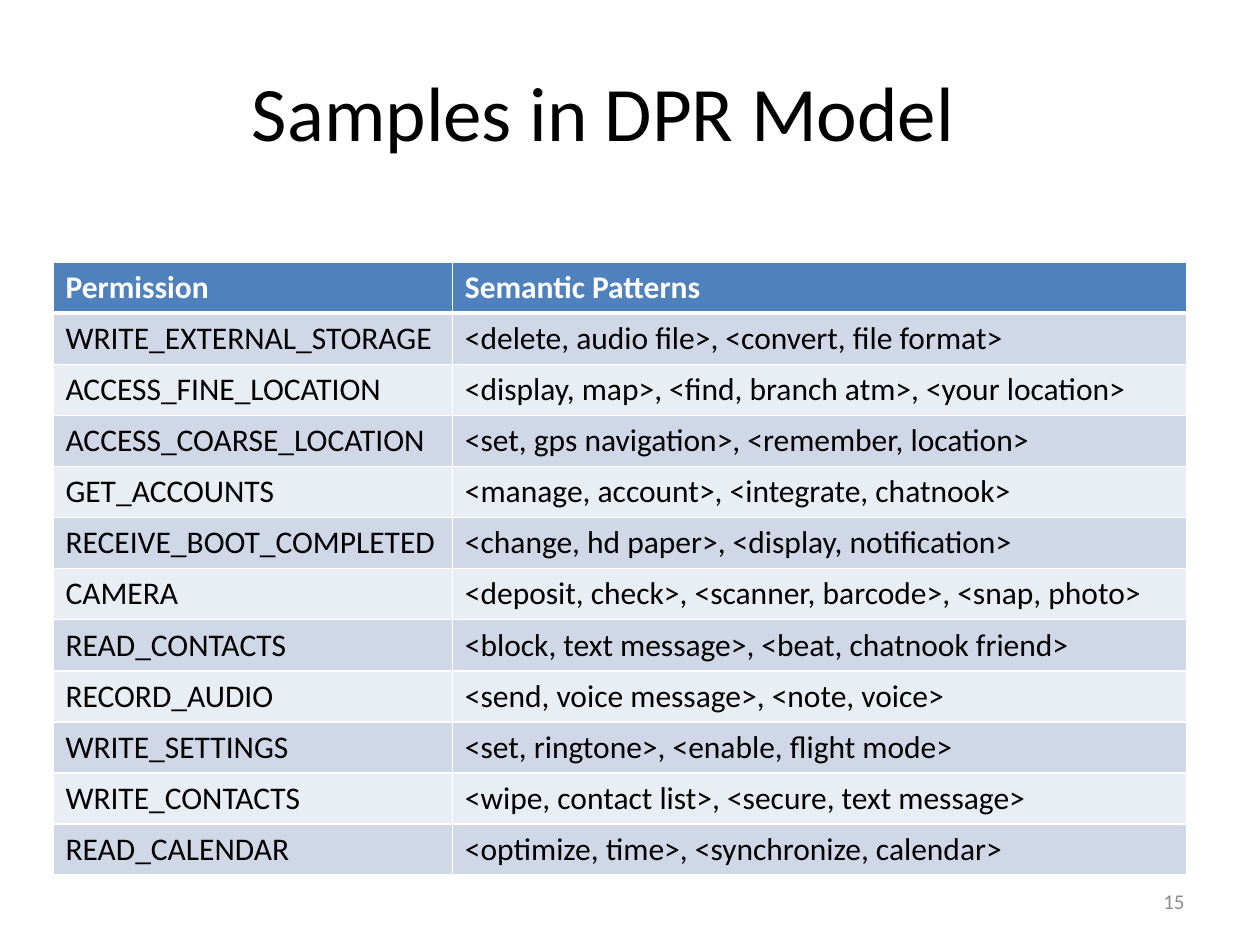
from dataclasses import dataclass

from lxml.etree import SubElement
from pptx import Presentation
from pptx.dml.color import RGBColor
from pptx.enum.text import MSO_ANCHOR, PP_ALIGN
from pptx.oxml.ns import qn
from pptx.util import Inches, Pt


@dataclass(frozen=True)
class Theme:
    font: str = "Calibri"
    text: str = "000000"
    header_text: str = "FFFFFF"
    header_fill: str = "4F81BD"
    bands: tuple = ("D0D8E8", "E9EDF4")
    border: str = "FFFFFF"
    number: str = "8C8C8C"
    title_size: int = 44
    table_size: int = 18
    number_size: int = 12
    thin: int = 1
    thick: int = 3


THEME = Theme()

HEADER = ("Permission", "Semantic Patterns")
PERMISSIONS = [
    ("WRITE_EXTERNAL_STORAGE", "<delete, audio file>, <convert, file format>"),
    ("ACCESS_FINE_LOCATION", "<display, map>, <find, branch atm>, <your location>"),
    ("ACCESS_COARSE_LOCATION", "<set, gps navigation>, <remember, location>"),
    ("GET_ACCOUNTS", "<manage, account>, <integrate, chatnook>"),
    ("RECEIVE_BOOT_COMPLETED", "<change, hd paper>, <display, notification>"),
    ("CAMERA", "<deposit, check>, <scanner, barcode>, <snap, photo>"),
    ("READ_CONTACTS", "<block, text message>, <beat, chatnook friend>"),
    ("RECORD_AUDIO", "<send, voice message>, <note, voice>"),
    ("WRITE_SETTINGS", "<set, ringtone>, <enable, flight mode>"),
    ("WRITE_CONTACTS", "<wipe, contact list>, <secure, text message>"),
    ("READ_CALENDAR", "<optimize, time>, <synchronize, calendar>"),
]


def write(tf, text, size, color, align=PP_ALIGN.LEFT, bold=False):
    """Fill a text frame with one formatted paragraph."""
    tf.text = text
    tf.word_wrap = True
    p = tf.paragraphs[0]
    p.alignment = align
    font = p.runs[0].font
    font.name, font.size, font.bold = THEME.font, Pt(size), bold
    font.color.rgb = RGBColor.from_string(color)


def add_title(s, text, left, top, width, height):
    sp = s.shapes.title
    sp.left, sp.top, sp.width, sp.height = left, top, width, height
    write(sp.text_frame, text, THEME.title_size, THEME.text, PP_ALIGN.CENTER)
    sp.text_frame.vertical_anchor = MSO_ANCHOR.MIDDLE


def set_borders(cell, top, bottom):
    """Draw all four cell edges; must run before the cell is filled."""
    tcPr = cell._tc.get_or_add_tcPr()
    edges = {"L": THEME.thin, "R": THEME.thin, "T": top, "B": bottom}
    for side, width in edges.items():
        ln = SubElement(tcPr, qn(f"a:ln{side}"), w=str(Pt(width)))
        fill = SubElement(ln, qn("a:solidFill"))
        SubElement(fill, qn("a:srgbClr"), val=THEME.border)


def add_permission_table(s, left, top, width, height, first_width):
    rows = [HEADER, *PERMISSIONS]
    table = s.shapes.add_table(len(rows), len(HEADER), left, top, width, height).table
    table.columns[0].width = first_width
    table.columns[1].width = width - first_width
    for i, row in enumerate(rows):
        is_header = i == 0
        fill = THEME.header_fill if is_header else THEME.bands[(i - 1) % 2]
        color = THEME.header_text if is_header else THEME.text
        for j, text in enumerate(row):
            cell = table.cell(i, j)
            set_borders(cell, THEME.thick if i == 1 else THEME.thin,
                        THEME.thick if is_header else THEME.thin)
            cell.fill.solid()
            cell.fill.fore_color.rgb = RGBColor.from_string(fill)
            write(cell.text_frame, text, THEME.table_size, color, bold=is_header)


def add_slide_number(s, number, left, top, width, height):
    tf = s.shapes.add_textbox(left, top, width, height).text_frame
    write(tf, str(number), THEME.number_size, THEME.number, PP_ALIGN.RIGHT)
    tf.vertical_anchor = MSO_ANCHOR.MIDDLE


def main():
    prs = Presentation()
    prs.slide_width, prs.slide_height = Inches(10), Inches(7.5)
    s = prs.slides.add_slide(prs.slide_layouts[5])
    add_title(s, "Samples in DPR Model",
              Inches(1.5), Inches(0.25), Inches(6.58), Inches(1.25))
    add_permission_table(s, Inches(0.42), Inches(2.08), Inches(9), Inches(4.87),
                         first_width=Inches(3.17))
    add_slide_number(s, 15, Inches(7.17), Inches(6.95), Inches(2.33), Inches(0.4))
    prs.save("out.pptx")


if __name__ == "__main__":
    main()
